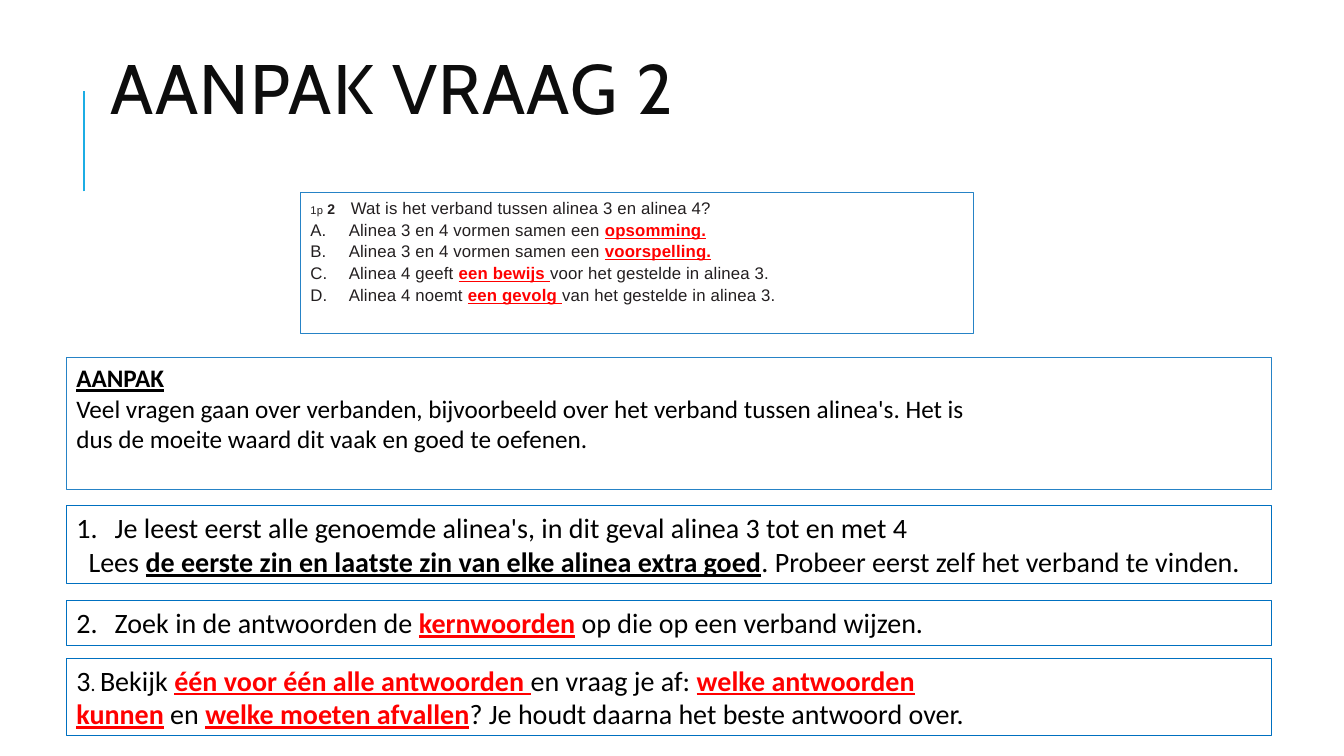
from dataclasses import dataclass

from lxml.etree import SubElement
from pptx import Presentation
from pptx.dml.color import RGBColor
from pptx.enum.shapes import MSO_CONNECTOR, MSO_SHAPE
from pptx.enum.text import MSO_ANCHOR, PP_ALIGN
from pptx.oxml.ns import qn
from pptx.util import Inches, Pt

BLACK = RGBColor(0x00, 0x00, 0x00)
TITLE_INK = RGBColor(0x0D, 0x0D, 0x0D)
QUESTION_INK = RGBColor(0x23, 0x1F, 0x20)
RED = RGBColor(0xFF, 0x00, 0x00)
ACCENT = RGBColor(0x1C, 0xAD, 0xE4)
FRAME = RGBColor(0x26, 0x83, 0xC6)
STEP_FRAME = RGBColor(0x00, 0x70, 0xC0)


@dataclass
class Span:
    text: str
    color: RGBColor = None
    bold: bool = None
    underline: bool = None
    size: float = None


def key(text, color=RED):
    return Span(text, color, True, True)


class Sheet:
    """Draws styled elements on one slide, placed in percent of its size."""

    def __init__(self, deck):
        self.deck = deck
        self.slide = deck.slides.add_slide(deck.slide_layouts[6])

    def x(self, share):
        return round(self.deck.slide_width * share / 100)

    def y(self, share):
        return round(self.deck.slide_height * share / 100)

    def area(self, left, top, width, height):
        return self.x(left), self.y(top), self.x(width), self.y(height)

    def rule(self, across, top, bottom):
        line = self.slide.shapes.add_connector(
            MSO_CONNECTOR.STRAIGHT, self.x(across), self.y(bottom), self.x(across), self.y(top))
        line.line.color.rgb = ACCENT
        line.line.width = Pt(1.5)
        SubElement(line._element.spPr, qn("a:effectLst"))

    def title(self, text, *place):
        frame = self.slide.shapes.add_textbox(*self.area(*place)).text_frame
        frame.word_wrap = True
        frame.vertical_anchor = MSO_ANCHOR.MIDDLE
        heading = self.paragraph(frame, [text], "Cabin", 50, TITLE_INK, spacing=100)
        heading.line_spacing = 0.8

    def box(self, frame_color, *place):
        panel = self.slide.shapes.add_shape(MSO_SHAPE.RECTANGLE, *self.area(*place))
        panel.shadow.inherit = False
        panel.fill.background()
        panel.line.color.rgb = frame_color
        panel.line.width = Pt(0.75)
        panel.text_frame.word_wrap = True
        panel.text_frame.vertical_anchor = MSO_ANCHOR.TOP
        return panel.text_frame

    def paragraph(self, frame, spans, font="Calibri", size=20, color=BLACK,
                  before=0, spacing=0, indent=0, number=None, start=1, tab=None):
        first = frame.paragraphs[0]
        para = frame.add_paragraph() if first.runs else first
        para.alignment = PP_ALIGN.LEFT
        para.space_before = Pt(before)
        props = para._p.get_or_add_pPr()
        props.set("marL", str(Inches(indent)))
        if number:
            props.set("indent", str(-Inches(indent)))
            SubElement(props, qn("a:buFont"), typeface=font)
            SubElement(props, qn("a:buAutoNum"), type=number, startAt=str(start))
        if tab:
            stops = SubElement(props, qn("a:tabLst"))
            SubElement(stops, qn("a:tab"), pos=str(Inches(tab)), algn="l")
        para.font.name = font
        para.font.size = Pt(size)
        para.font.color.rgb = color
        props.find(qn("a:defRPr")).set("spc", str(spacing))
        for span in spans:
            span = span if isinstance(span, Span) else Span(span)
            run = para.add_run()
            run.text = span.text
            run.font.bold = span.bold
            run.font.underline = span.underline
            run.font.color.rgb = span.color or color
            if span.size:
                run.font.size = Pt(span.size)
        return para


def build():
    deck = Presentation()
    deck.slide_width, deck.slide_height = Inches(13.33), Inches(7.5)
    sheet = Sheet(deck)
    sheet.rule(6.23, 12, 25.33)
    sheet.title("AANPAK VRAAG 2", 7.5, 1.6, 79.74, 21.87)

    question = sheet.box(FRAME, 22.36, 25.47, 50.04, 18.67)
    style = dict(font="Arial", size=12, color=QUESTION_INK, spacing=10)
    sheet.paragraph(question, [Span("1p", size=8), Span(" 2\t", bold=True, size=10),
                               "Wat is het verband tussen alinea 3 en alinea 4?"],
                    before=3.5, tab=0.4, **style)
    answers = [
        ["Alinea 3 en 4 vormen samen een ", key("opsomming.")],
        ["Alinea 3 en 4 vormen samen een ", key("voorspelling.")],
        ["Alinea 4 geeft ", key("een bewijs "), "voor het gestelde in alinea 3."],
        ["Alinea 4 noemt ", key("een gevolg "), "van het gestelde in alinea 3."],
    ]
    for answer in answers:
        sheet.paragraph(question, answer, before=1.2, indent=0.38,
                        number="alphaUcPeriod", **style)

    left, width = 4.95, 89.65
    approach = sheet.box(FRAME, left, 47.33, width, 17.47)
    for line in [
        key("AANPAK", BLACK),
        "Veel vragen gaan over verbanden, bijvoorbeeld over het verband tussen alinea's. Het is",
        "dus de moeite waard dit vaak en goed te oefenen.",
    ]:
        sheet.paragraph(approach, [line], size=18)

    numbered = dict(indent=0.38, number="arabicPeriod")
    reading = sheet.box(STEP_FRAME, left, 66.93, width, 10.27)
    sheet.paragraph(reading, ["Je leest eerst alle genoemde alinea's, in dit geval alinea 3 tot en met 4"],
                    **numbered)
    sheet.paragraph(reading, ["Lees ", key("de eerste zin en laatste zin van elke alinea extra goed", BLACK),
                              ". Probeer eerst zelf het verband te vinden."], indent=0.12)

    searching = sheet.box(STEP_FRAME, left, 79.47, width, 5.87)
    sheet.paragraph(searching, ["Zoek in de antwoorden de ", key("kernwoorden"),
                                " op die op een verband wijzen."], start=2, **numbered)

    choosing = sheet.box(STEP_FRAME, left, 87.07, width, 10.27)
    sheet.paragraph(choosing, ["3", Span(". ", size=14), "Bekijk ", key("één voor één alle antwoorden "),
                               "en vraag je af: ", key("welke antwoorden")])
    sheet.paragraph(choosing, [key("kunnen"), " en ", key("welke moeten afvallen"),
                               "? Je houdt daarna het beste antwoord over."])
    deck.save("out.pptx")


if __name__ == "__main__":
    build()
